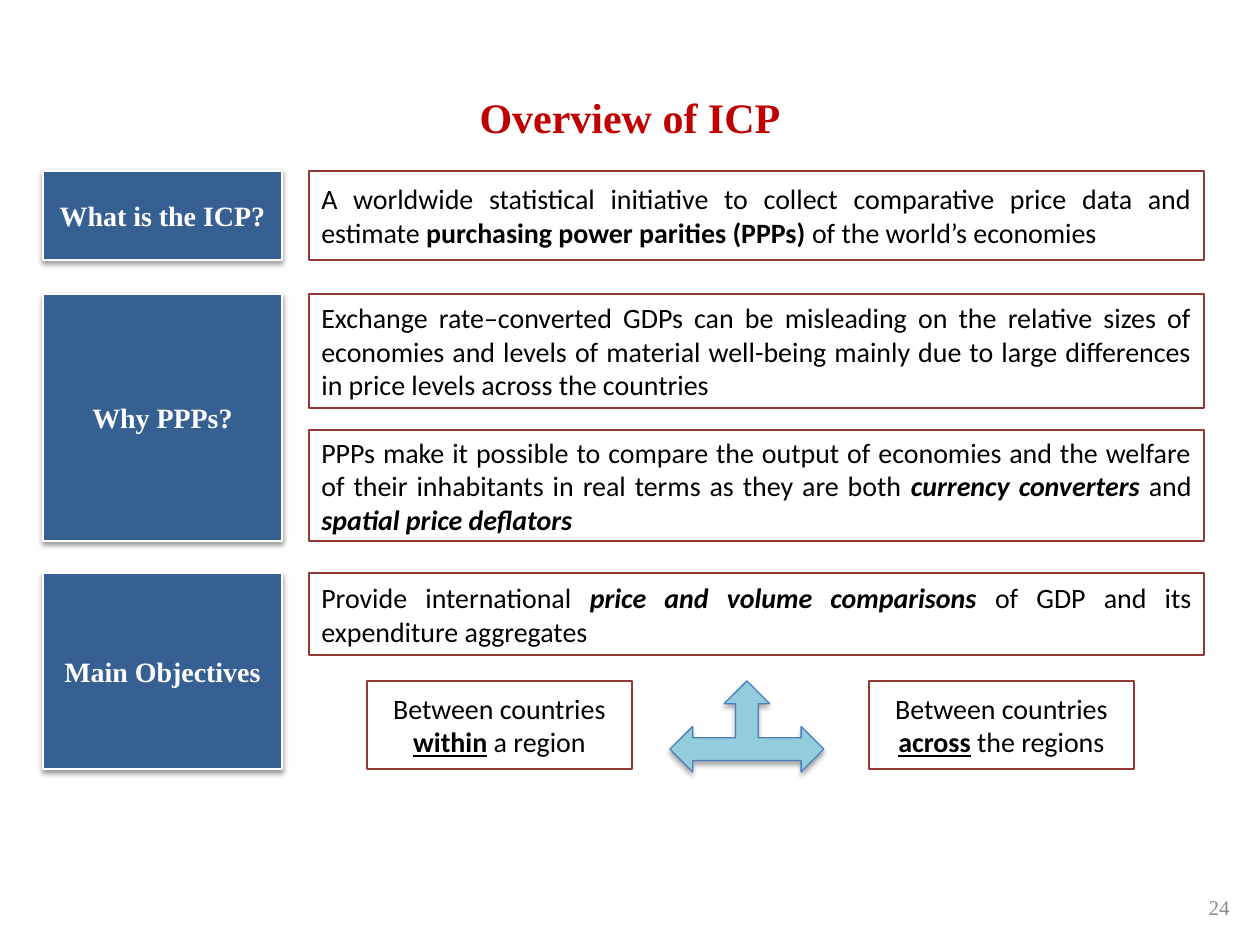
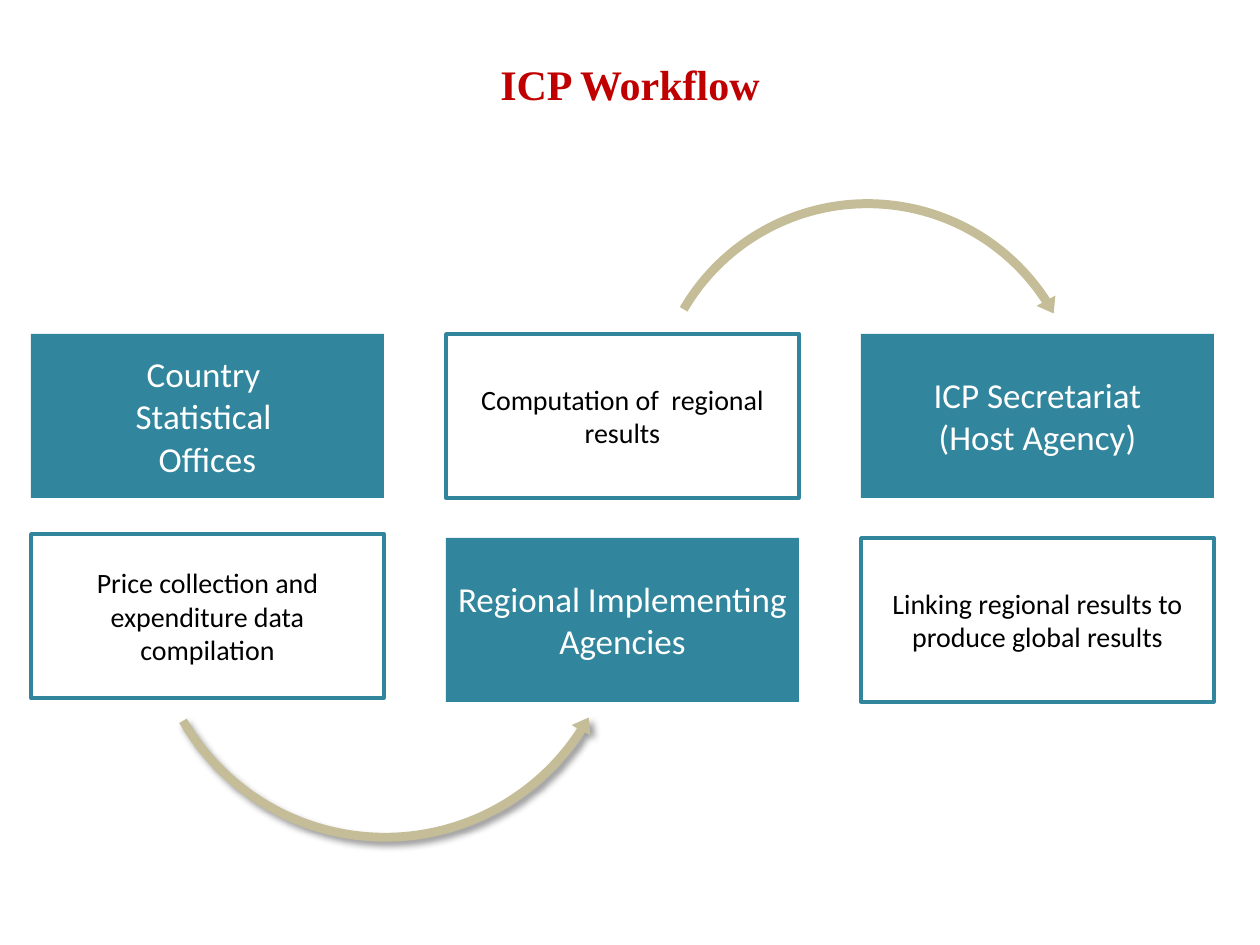
import lxml.etree
import pptx
import pptx.dml.color
import pptx.enum.shapes
import pptx.enum.text
import pptx.oxml.ns
import pptx.util

RGB = pptx.dml.color.RGBColor
SHAPE = pptx.enum.shapes.MSO_SHAPE
ALIGN = pptx.enum.text.PP_ALIGN
MIDDLE = pptx.enum.text.MSO_ANCHOR.MIDDLE
qn = pptx.oxml.ns.qn

EMU_PER_PX = 914400 / 126
SERIF = "Times New Roman"
SANS = "Calibri"

WHITE = RGB(0xFF, 0xFF, 0xFF)
BLACK = RGB(0x00, 0x00, 0x00)
TITLE_RED = RGB(0xC0, 0x00, 0x00)
NUMBER_GREY = RGB(0x8C, 0x8C, 0x8C)
LABEL_BLUE = RGB(0x37, 0x60, 0x92)
FRAME_RED = RGB(0x95, 0x37, 0x35)
ARROW_AQUA = RGB(0x93, 0xCD, 0xDD)
ARROW_EDGE = RGB(0x4B, 0x7E, 0xBC)
STAGE_TEAL = RGB(0x31, 0x85, 0x9C)
FLOW_TAN = RGB(0xC4, 0xBD, 0x97)

LABEL_SHADOW = (38, 3.1, 1.6, 90)
ARROW_SHADOW = (35, 3.1, 1.8, 90)
FLOW_SHADOW = (40, 4, 3, 45)

LABEL_WIDTH = 239
STATEMENT_INDENT = 266
STAGE_WIDTH = 353
STAGE_PITCH = 415
STAGE_HEIGHT = 164


def px(length):
    return pptx.util.Emu(round(length * EMU_PER_PX))


def add_shadow(shape, opacity, blur, distance, degrees):
    effects = shape.element.spPr.find(qn("a:effectLst"))
    shadow = lxml.etree.SubElement(
        effects, qn("a:outerShdw"),
        blurRad=str(pptx.util.Pt(blur)), dist=str(pptx.util.Pt(distance)),
        dir=str(degrees * 60000), rotWithShape="0")
    color = lxml.etree.SubElement(shadow, qn("a:srgbClr"), val=str(BLACK))
    lxml.etree.SubElement(color, qn("a:alpha"), val=str(opacity * 1000))


def add_block(page, kind, box, fill, line=None, line_width=1, shadow=None):
    shape = page.shapes.add_shape(kind, *map(px, box))
    shape.shadow.inherit = False
    shape.fill.solid()
    shape.fill.fore_color.rgb = fill
    if line is None:
        shape.line.fill.background()
    else:
        shape.line.color.rgb = line
        shape.line.width = pptx.util.Pt(line_width)
    if shadow:
        add_shadow(shape, *shadow)
    return shape


def format_text(frame, font, size, color, align, bold=None):
    frame.word_wrap = True
    frame.vertical_anchor = MIDDLE
    for para in frame.paragraphs:
        para.alignment = align
        for span in para.runs:
            span.font.name = font
            span.font.size = pptx.util.Pt(size)
            span.font.color.rgb = color
            if bold is not None:
                span.font.bold = bold


def add_framed_text(page, box, spans, frame_color, line_width, align):
    shape = add_block(page, SHAPE.RECTANGLE, box, WHITE, frame_color, line_width)
    color = shape.element.spPr.find(qn("a:solidFill"))[0]
    lxml.etree.SubElement(color, qn("a:alpha"), val="90000")
    para = shape.text_frame.paragraphs[0]
    para.space_after = pptx.util.Pt(6)
    for text, style in spans:
        span = para.add_run()
        span.text = text
        span.font.bold = "b" in style
        span.font.italic = "i" in style
        span.font.underline = "u" in style
    format_text(shape.text_frame, SANS, 16, BLACK, align)


def add_page(deck, title, title_height):
    page = deck.slides.add_slide(deck.slide_layouts[5])
    heading = page.shapes.title
    heading.left, heading.top, heading.width, heading.height = map(
        px, (63, 38, 1134, title_height))
    heading.text_frame.text = title
    format_text(heading.text_frame, SERIF, 24, TITLE_RED, ALIGN.CENTER, True)
    return page


def add_page_number(page, box, number):
    shape = page.shapes.add_textbox(*map(px, box))
    shape.text_frame.text = number
    format_text(shape.text_frame, SERIF, 12, NUMBER_GREY, ALIGN.RIGHT)


def add_section(page, box, label, statements):
    left, top, width, height = box
    label_box = add_block(page, SHAPE.RECTANGLE, (left, top, LABEL_WIDTH, height),
                          LABEL_BLUE, WHITE, 1.5, LABEL_SHADOW)
    label_box.text_frame.text = label
    format_text(label_box.text_frame, SERIF, 16, WHITE, ALIGN.CENTER, True)
    for offset, statement_height, spans in statements:
        statement_box = (left + STATEMENT_INDENT, top + offset,
                         width - STATEMENT_INDENT, statement_height)
        add_framed_text(page, statement_box, spans, FRAME_RED, 1, ALIGN.JUSTIFY)


def add_comparison(page, box, scopes):
    left, top, width, height = box
    scope_width = 265
    for scope_left, (emphasis, rest) in zip((left, left + width - scope_width), scopes):
        spans = [("Between countries ", ""), (emphasis, "bu"), (rest, "")]
        add_framed_text(page, (scope_left, top, scope_width, height), spans,
                        FRAME_RED, 1, ALIGN.CENTER)
    add_block(page, SHAPE.LEFT_RIGHT_UP_ARROW, (left + 303, top, 154, height + 3),
              ARROW_AQUA, ARROW_EDGE, 0.75, ARROW_SHADOW)


def add_stage(page, box, actor, task, actor_on_top):
    left, top, width, height = box
    upper = (left, top, width, STAGE_HEIGHT)
    lower = (left, top + height - STAGE_HEIGHT, width, STAGE_HEIGHT)
    actor_place, task_place = (upper, lower) if actor_on_top else (lower, upper)
    actor_box = add_block(page, SHAPE.RECTANGLE, actor_place, STAGE_TEAL)
    frame = actor_box.text_frame
    frame.margin_left = frame.margin_right = px(5)
    frame.margin_top = frame.margin_bottom = px(4)
    frame.text = actor
    format_text(frame, SANS, 20, WHITE, ALIGN.CENTER)
    add_framed_text(page, task_place, [(task, "")], STAGE_TEAL, 2, ALIGN.CENTER)


def add_flow_arrow(page, kind, box, rotation, adjustments, shadow=None):
    arrow = add_block(page, kind, box, FLOW_TAN, shadow=shadow)
    arrow.rotation = rotation
    for index, value in enumerate(adjustments):
        arrow.adjustments[index] = value


def build_overview(deck):
    page = add_page(deck, "Overview of ICP", 157)
    add_page_number(page, (949, 891, 293, 32), "24")
    add_section(page, (43, 171, 1161, 89), "What is the ICP?", [
        (0, 89, [
            ("A worldwide statistical initiative to collect comparative price data "
             "and estimate ", ""),
            ("purchasing power parities (PPPs) ", "b"),
            ("of the world’s economies", "")]),
    ])
    add_section(page, (43, 294, 1161, 247), "Why PPPs?", [
        (0, 114, [
            ("Exchange rate–converted GDPs can be misleading on the relative sizes of "
             "economies and levels of material well-being mainly due to large "
             "differences in price levels across the countries", "")]),
        (136, 111, [
            ("PPPs make it possible to compare the output of economies and the welfare "
             "of their inhabitants in real terms as they are both ", ""),
            ("currency converters ", "bi"),
            ("and ", ""),
            ("spatial price deflators ", "bi")]),
    ])
    add_section(page, (43, 573, 1161, 196), "Main Objectives", [
        (0, 82, [
            ("Provide international ", ""),
            ("price and volume comparisons ", "bi"),
            ("of GDP and its expenditure aggregates", "")]),
    ])
    add_comparison(page, (367, 681, 767, 88),
                   [("within", " a region"), ("across", " the regions")])


def build_workflow(deck):
    page = add_page(deck, "ICP Workflow", 91)
    add_flow_arrow(page, SHAPE.LEFT_CIRCULAR_ARROW, (141, 360, 488, 488), 353.8,
                   (0.018, 2.204, 23.402, 93.688, 0.022), FLOW_SHADOW)
    add_flow_arrow(page, SHAPE.CIRCULAR_ARROW, (644, 193, 447, 447), 7.5,
                   (0.02, 2.413, 191.718, 121.642, 0.024))
    stages = [
        (364, "Country \nStatistical \nOffices",
         "Price collection and expenditure data compilation", True),
        (368, "Regional Implementing Agencies",
         "Computation of  regional results", False),
        (368, "ICP Secretariat\n(Host Agency)",
         "Linking regional results to produce global results", True),
    ]
    for column, (height, actor, task, actor_on_top) in enumerate(stages):
        box = (31 + column * STAGE_PITCH, 334, STAGE_WIDTH, height)
        add_stage(page, box, actor, task, actor_on_top)


def main():
    deck = pptx.Presentation()
    deck.slide_width = px(1260)
    deck.slide_height = px(945)
    build_overview(deck)
    build_workflow(deck)
    deck.save("out.pptx")


if __name__ == "__main__":
    main()
